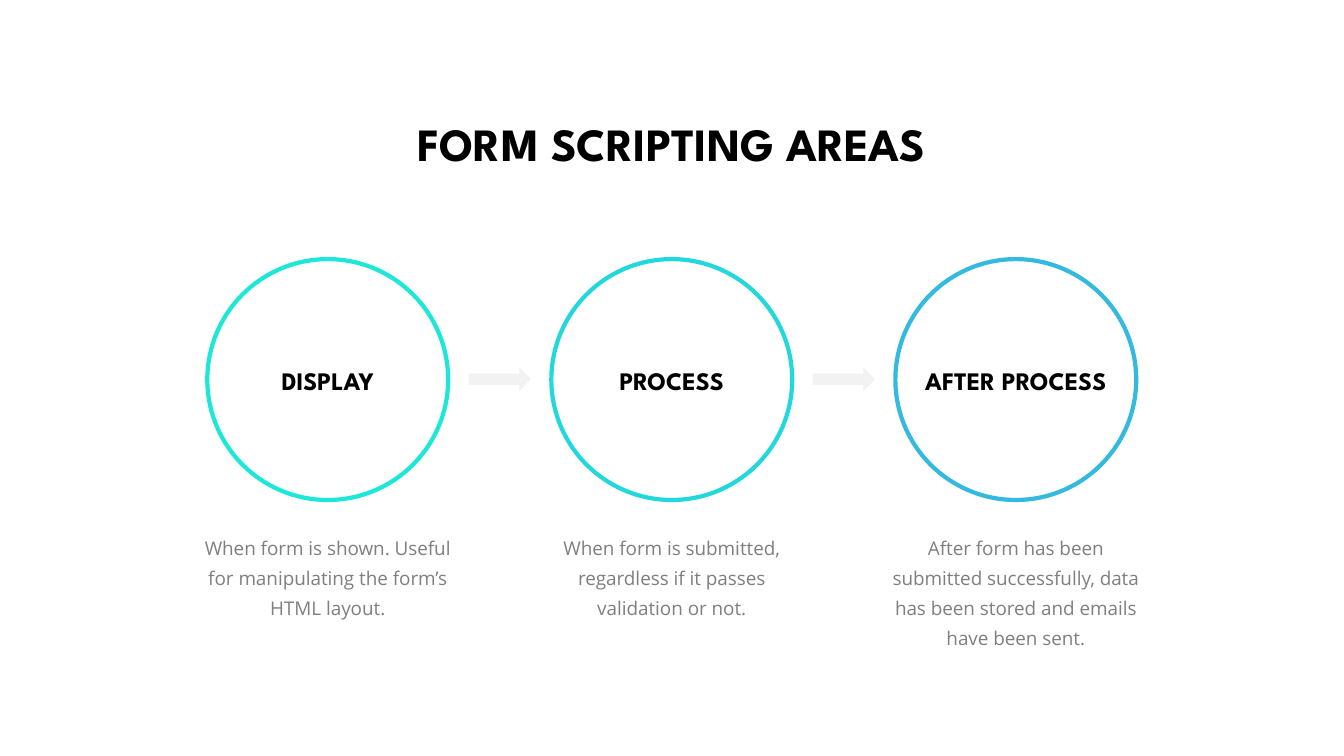
from pptx import Presentation
from pptx.dml.color import RGBColor
from pptx.enum.shapes import MSO_SHAPE as SHAPE
from pptx.enum.text import MSO_ANCHOR as ANCHOR, PP_ALIGN as ALIGN
from pptx.util import Cm, Pt


def rgb(value):
    return RGBColor.from_string(value)


def add_text(text, box, font, size, color, bold=False, frame=None, spacing=None):
    """Add a centred one-paragraph text box; frame and spacing hold extra settings."""
    tf = s.shapes.add_textbox(*map(Cm, box)).text_frame
    p = tf.paragraphs[0]
    p.alignment = ALIGN.CENTER
    r = p.add_run()
    r.text = text
    r.font.color.rgb = rgb(color)
    settings = [(tf, frame or {}), (p, spacing or {}),
                (r.font, {"name": font, "size": Pt(size), "bold": bold})]
    for target, values in settings:
        for name, value in values.items():
            setattr(target, name, value)


prs = Presentation()
prs.slide_width, prs.slide_height = Cm(33.87), Cm(19.05)
s = prs.slides.add_slide(prs.slide_layouts[6])

HEAD, BODY = "League Spartan", "Open Sans"
CENTER, PITCH = 16.93, 8.67
DIAMETER, LABEL_W, NOTE_W, ARROW_W = 6.07, 5.9, 7.09, 1.57

add_text("FORM SCRIPTING AREAS", (CENTER - 7.75, 2.41, 15.5, 1.96), HEAD, 33, "000000",
         bold=True, frame={"word_wrap": False}, spacing={"line_spacing": Pt(50)})

stages = [
    ("DISPLAY", "1DE7D8", 2.67,
     "When form is shown. Useful for manipulating the form’s HTML layout."),
    ("PROCESS", "23D8DC", 2.67,
     "When form is submitted, regardless if it passes validation or not."),
    ("AFTER PROCESS", "34B9DF", 3.43,
     "After form has been submitted successfully, data has been stored and emails have been sent."),
]
note_frame = {"word_wrap": True, "margin_left": Cm(0.3), "margin_right": Cm(0.3),
              "margin_top": Cm(0.15), "margin_bottom": Cm(0.15)}
note_spacing = {"line_spacing": Pt(21.5), "space_before": Pt(2.7)}

for i, (label, color, note_h, note) in enumerate(stages):
    x = CENTER + (i - 1) * PITCH

    circle = s.shapes.add_shape(SHAPE.OVAL, Cm(x - DIAMETER / 2), Cm(6.53),
                                Cm(DIAMETER), Cm(DIAMETER))
    circle.shadow.inherit = False
    circle.fill.background()
    circle.line.color.rgb = rgb(color)
    circle.line.width = Pt(3)

    add_text(label, (x - LABEL_W / 2, 9.07, LABEL_W, 1.02), HEAD, 18, "000000", bold=True,
             frame={"word_wrap": False, "vertical_anchor": ANCHOR.MIDDLE})
    add_text(note, (x - NOTE_W / 2, 13.18, NOTE_W, note_h), BODY, 13.5, "7F7F7F",
             frame=note_frame, spacing=note_spacing)

    if i < len(stages) - 1:
        arrow = s.shapes.add_shape(SHAPE.RIGHT_ARROW, Cm(x + PITCH / 2 - ARROW_W / 2), Cm(9.27),
                                   Cm(ARROW_W), Cm(0.58))
        arrow.shadow.inherit = False
        arrow.fill.solid()
        arrow.fill.fore_color.rgb = rgb("F2F2F2")
        arrow.line.fill.background()

prs.save("out.pptx")
